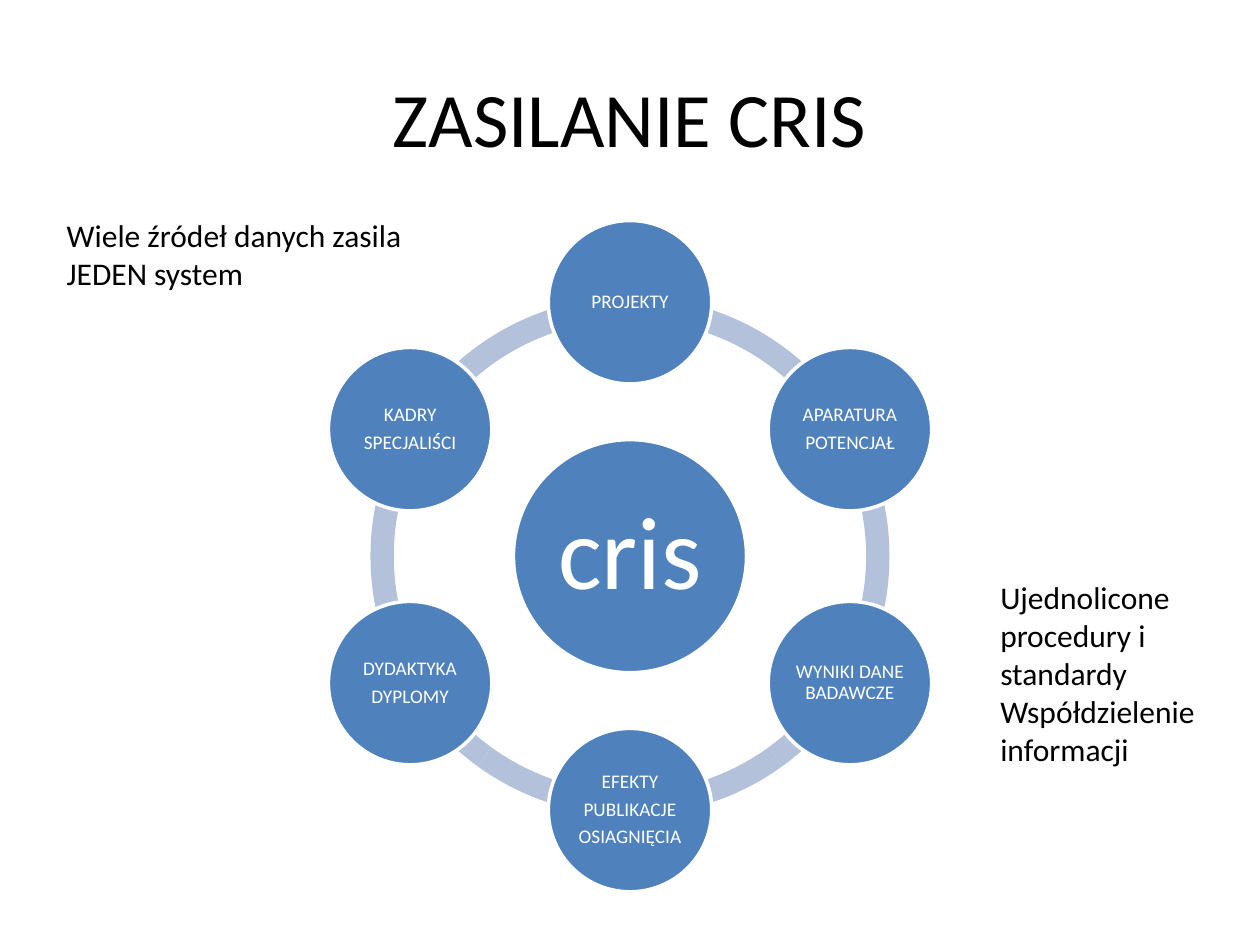
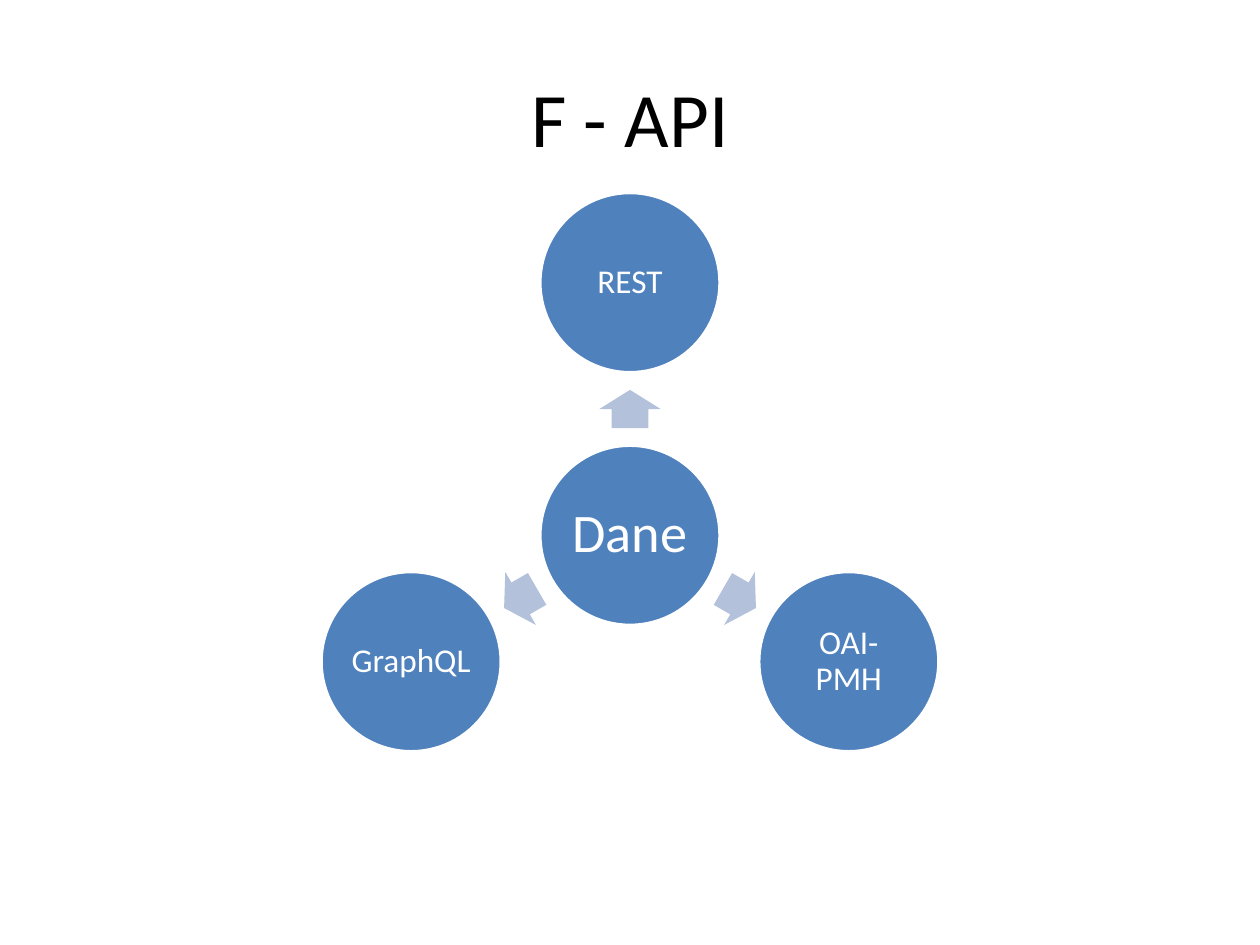
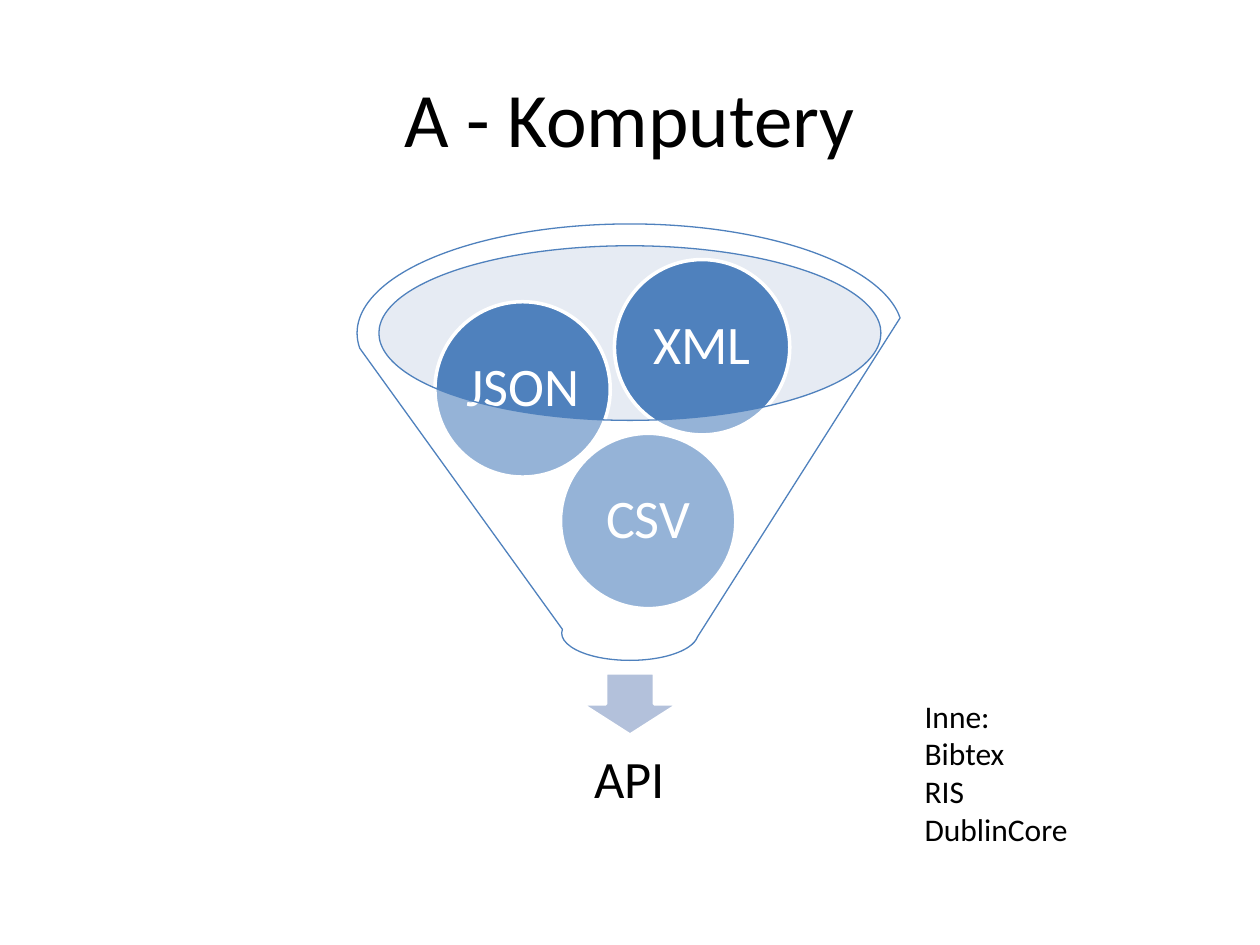
from math import cos, radians, sin

from lxml.etree import SubElement
from pptx import Presentation
from pptx.dml.color import RGBColor
from pptx.enum.shapes import MSO_SHAPE as Preset
from pptx.enum.text import MSO_ANCHOR as Anchor, MSO_AUTO_SIZE as AutoSize, PP_ALIGN as Align
from pptx.oxml.ns import qn
from pptx.util import Pt

FONT = "Calibri"
BLACK, WHITE, BLUE = "000000", "FFFFFF", "4F81BD"
PALE_BLUE, RIM_BLUE = "B3C1DB", "C2CDE1"
TITLE_SIZE, NOTE_SIZE = 44, 18
TITLE_BOX = (36, 21.6, 648, 90)
CENTER_X = 360

# Slide 1: sources arranged clockwise from the top
SOURCES = {
    "title": "ZASILANIE CRIS",
    "hub": ["cris"],
    "nodes": [
        ["PROJEKTY"],
        ["APARATURA", "POTENCJAŁ"],
        ["WYNIKI DANE BADAWCZE"],
        ["EFEKTY", "PUBLIKACJE", "OSIAGNIĘCIA"],
        ["DYDAKTYKA", "DYPLOMY"],
        ["KADRY", "SPECJALIŚCI"],
    ],
    "notes": [
        (["Wiele źródeł danych zasila JEDEN system"], (31, 120, 209.5, 51)),
        (["Ujednolicone procedury i standardy", "Współdzielenie informacji"],
         (564.5, 327, 147.6, 116.6)),
    ],
}
RING_JOINTS = [18, 54, 90, 126, 162, 198]

# Slide 2: interfaces clockwise from the top
INTERFACES = {
    "title": "F - API",
    "hub": ["Dane"],
    "nodes": [["REST"], ["OAI-PMH"], ["GraphQL"]],
}

# Slide 3: formats with the centre of each ball
FORMATS = {
    "title": "A - Komputery",
    "balls": [("CSV", 370.4, 297.7), ("JSON", 298.6, 222.5), ("XML", 401.2, 198.4)],
    "result": ["API"],
    "note": (["Inne:", "Bibtex", "RIS", "DublinCore"], (521.3, 394.5, 175.7, 94.3)),
}


def rgb(value):
    return RGBColor.from_string(value)


def points(*values):
    return [Pt(round(value, 2)) for value in values]


def centered_box(x, y, width, height):
    return x - width / 2, y - height / 2, width, height


def around(center_y, radius, angle):
    """Point at a clockwise angle (0 is to the right) about the diagram centre."""
    turn = radians(angle)
    return CENTER_X + radius * cos(turn), center_y + radius * sin(turn)


def clock_angles(count):
    return [(360 * index / count - 90) % 360 for index in range(count)]


def add_slide(presentation, title):
    slide = presentation.slides.add_slide(presentation.slide_layouts[5])
    placeholder = slide.shapes.title
    (placeholder.left, placeholder.top,
     placeholder.width, placeholder.height) = points(*TITLE_BOX)
    write(placeholder, [title], TITLE_SIZE, BLACK, {"alignment": Align.CENTER})
    placeholder.text_frame.vertical_anchor = Anchor.MIDDLE
    return slide


def write(shape, lines, size, color, paragraph_format):
    frame = shape.text_frame
    frame.word_wrap = True
    for index, line in enumerate(lines):
        paragraph = frame.paragraphs[0] if index == 0 else frame.add_paragraph()
        paragraph.text = line
        for name, value in paragraph_format.items():
            setattr(paragraph, name, value)
        font = paragraph.runs[0].font
        for name, value in {"name": FONT, "size": Pt(size)}.items():
            setattr(font, name, value)
        font.color.rgb = rgb(color)


def write_label(shape, lines, size, color, inset):
    """Centred diagram text with tight lines and an equal inset on all sides."""
    write(shape, lines, size, color, {
        "alignment": Align.CENTER, "line_spacing": 0.9,
        "space_after": Pt(round(0.35 * size, 2)),
    })
    frame = shape.text_frame
    frame.vertical_anchor = Anchor.MIDDLE
    for side in ("left", "top", "right", "bottom"):
        setattr(frame, f"margin_{side}", Pt(inset))


def add_note(slide, lines, box):
    note = slide.shapes.add_textbox(*points(*box))
    write(note, lines, NOTE_SIZE, BLACK, {"alignment": Align.LEFT})
    note.text_frame.auto_size = AutoSize.SHAPE_TO_FIT_TEXT


def add_preset(slide, preset, box, fill, line=None, line_width=2, opacity=None):
    shape = slide.shapes.add_shape(preset, *points(*box))
    shape.shadow.inherit = False
    shape.fill.solid()
    shape.fill.fore_color.rgb = rgb(fill)
    if opacity is not None:
        color = shape._element.spPr.find(qn("a:solidFill"))[0]
        SubElement(color, qn("a:alpha"), val=str(opacity * 1000))
    if line:
        shape.line.color.rgb = rgb(line)
        shape.line.width = Pt(line_width)
    else:
        shape.line.fill.background()
    return shape


def add_circle(slide, center, diameter, lines, size, inset):
    box = centered_box(*center, diameter, diameter)
    circle = add_preset(slide, Preset.OVAL, box, BLUE, WHITE)
    write_label(circle, lines, size, WHITE, inset)


def build_sources(presentation):
    slide = add_slide(presentation, SOURCES["title"])
    center_y, radius, ring = 317.8, 145.1, 296.6
    for start, end in zip(RING_JOINTS, RING_JOINTS[1:] + RING_JOINTS[:1]):
        box = centered_box(CENTER_X, center_y, ring, ring)
        arc = add_preset(slide, Preset.BLOCK_ARC, box, PALE_BLUE)
        # Angles are stored in 1/60000 degree, adjustments in 1/100000
        for index, value in enumerate((start * 0.6, end * 0.6, 0.045)):
            arc.adjustments[index] = value
    add_circle(slide, (CENTER_X, center_y), 133.2, SOURCES["hub"], 59, 5.9)
    nodes = SOURCES["nodes"]
    for angle, lines in zip(clock_angles(len(nodes)), nodes):
        add_circle(slide, around(center_y, radius, angle), 93.4, lines, 11, 1.1)
    for lines, box in SOURCES["notes"]:
        add_note(slide, lines, box)


def build_interfaces(presentation):
    slide = add_slide(presentation, INTERFACES["title"])
    center_y, radius, diameter = 305.9, 144.4, 103
    add_circle(slide, (CENTER_X, center_y), diameter, INTERFACES["hub"], 31, 3.1)
    nodes = INTERFACES["nodes"]
    for angle, lines in zip(clock_angles(len(nodes)), nodes):
        box = centered_box(*around(center_y, radius / 2, angle), 21.8, 35)
        arrow = add_preset(slide, Preset.RIGHT_ARROW, box, PALE_BLUE)
        arrow.rotation = angle
        arrow.adjustments[0] = 0.6
        add_circle(slide, around(center_y, radius, angle), diameter, lines, 19, 1.9)


def build_formats(presentation):
    slide = add_slide(presentation, FORMATS["title"])
    add_preset(slide, Preset.OVAL, (216.3, 140.6, 287.3, 99.8), RIM_BLUE, opacity=40)
    add_preset(slide, Preset.DOWN_ARROW, centered_box(CENTER_X, 402.3, 55.7, 35.6),
               PALE_BLUE, WHITE)
    result = slide.shapes.add_textbox(*points(*centered_box(CENTER_X, 446.7, 267.2, 66.8)))
    write_label(result, FORMATS["result"], 30, BLACK, 16.6)
    for name, x, y in FORMATS["balls"]:
        add_circle(slide, (x, y), 100.2, [name], 31, 3.1)
    add_preset(slide, Preset.FUNNEL, centered_box(CENTER_X, 252.7, 311.8, 249.4),
               WHITE, BLUE, 0.75, opacity=40)
    add_note(slide, *FORMATS["note"])


def main():
    presentation = Presentation()
    presentation.slide_width, presentation.slide_height = Pt(720), Pt(540)
    for build in (build_sources, build_interfaces, build_formats):
        build(presentation)
    presentation.save("out.pptx")


if __name__ == "__main__":
    main()
